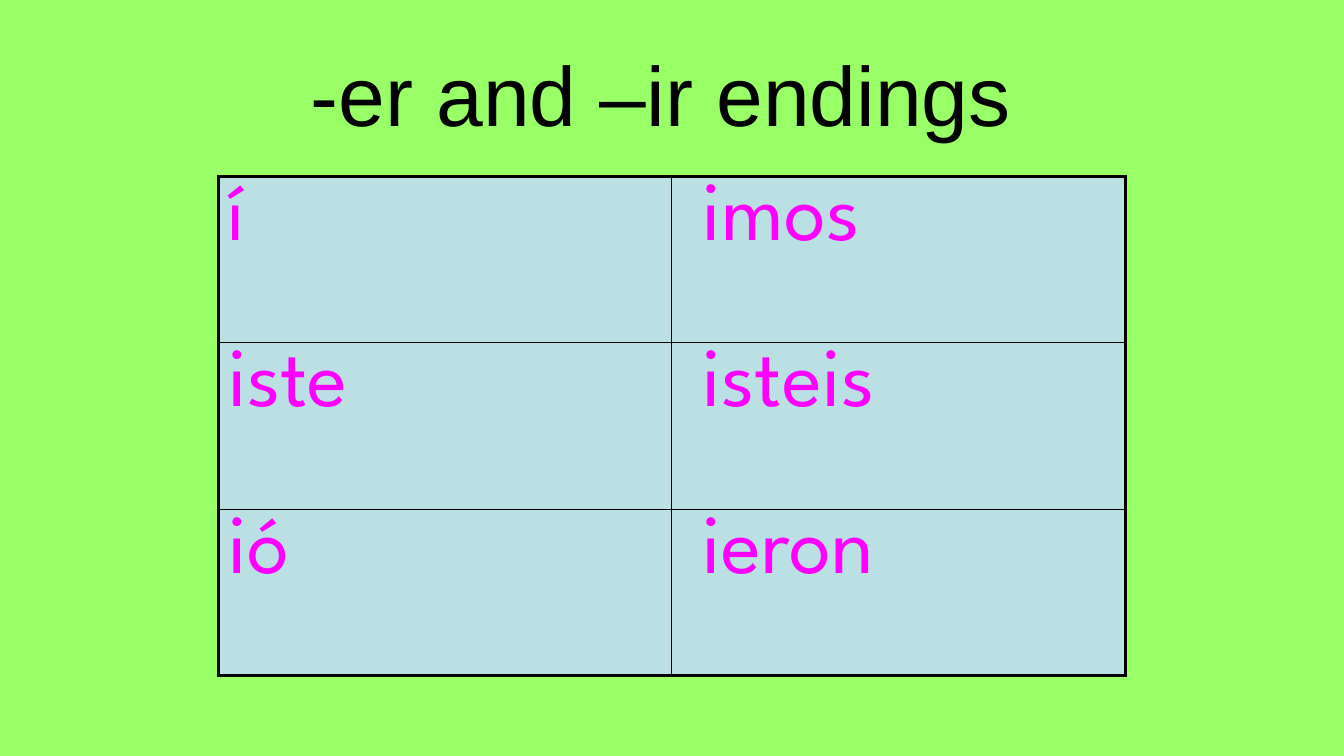
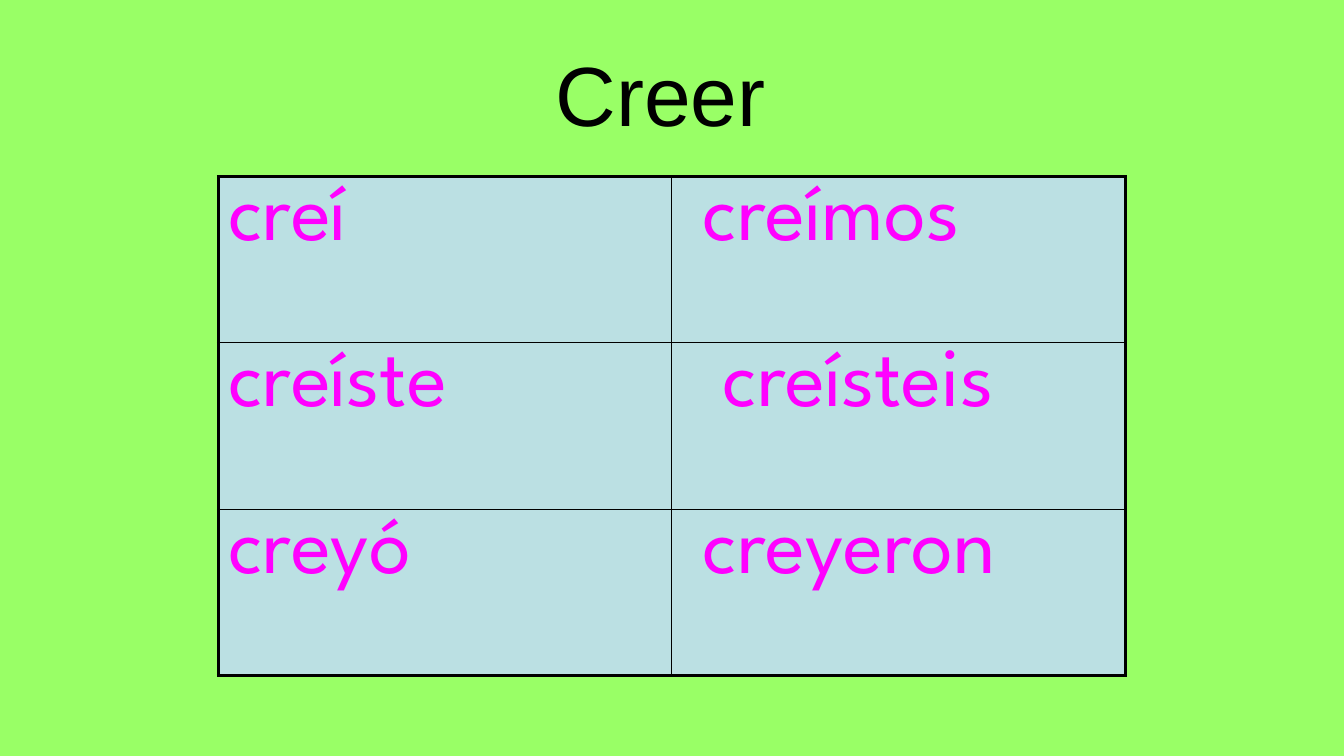
from lxml import etree
from pptx import Presentation
from pptx import util as u
from pptx.dml.color import RGBColor
from pptx.enum import text
from pptx.oxml import ns

SLIDES = [
    ("-er and –ir endings", [("í", "imos"), ("iste", "isteis"), ("ió", "ieron")], {}),
    ("Creer", [("creí", "creímos"), ("creíste", "creísteis"), ("creyó", "creyeron")],
     {"creísteis": 1.28}),
]

GREEN, BLUE, MAGENTA, BLACK = "99FF66", "BBE0E3", "FF00FF", "000000"
TITLE_FONT, TABLE_FONT, FONT_SIZE = "Arial", "League Spartan", 60
OUTER_LINE, INNER_LINE = 2.25, 1
COLUMN_WIDTH, ROW_HEIGHT = 11.43, 4.19
COLUMN_INDENTS = (0.25, 0.78)


def color(value):
    return RGBColor.from_string(value)


def format_text(frame, font_name, font_color, alignment):
    paragraph = frame.paragraphs[0]
    paragraph.alignment = alignment
    paragraph.font.name = font_name
    paragraph.font.size = u.Pt(FONT_SIZE)
    paragraph.font.color.rgb = color(font_color)


def add_title(slide, title):
    shape = slide.shapes.title
    shape.left, shape.top = u.Cm(1.7), u.Cm(0.76)
    shape.width, shape.height = u.Cm(30.48), u.Cm(3.18)
    frame = shape.text_frame
    frame.text = title
    frame.margin_right = u.Cm(0.84)
    frame.vertical_anchor = text.MSO_ANCHOR.MIDDLE
    format_text(frame, TITLE_FONT, BLACK, text.PP_ALIGN.CENTER)


def set_borders(cell, widths):
    properties = cell._tc.get_or_add_tcPr()
    for index, (side, width) in enumerate(widths.items()):
        line = etree.Element(ns.qn("a:ln" + side), w=str(u.Pt(width)))
        fill = etree.SubElement(line, ns.qn("a:solidFill"))
        etree.SubElement(fill, ns.qn("a:srgbClr"), val=BLACK)
        properties.insert(index, line)


def add_endings_table(slide, rows, indents):
    row_count, column_count = len(rows), len(rows[0])
    table = slide.shapes.add_table(
        row_count, column_count, u.Cm(5.5), u.Cm(4.45),
        u.Cm(COLUMN_WIDTH * column_count), u.Cm(ROW_HEIGHT * row_count)).table
    table.first_row = table.horz_banding = False
    for row_index, words in enumerate(rows):
        for column_index, word in enumerate(words):
            cell = table.cell(row_index, column_index)
            cell.text = word
            cell.margin_left = u.Cm(indents.get(word, COLUMN_INDENTS[column_index]))
            format_text(cell.text_frame, TABLE_FONT, MAGENTA, text.PP_ALIGN.LEFT)
            cell.fill.solid()
            cell.fill.fore_color.rgb = color(BLUE)
            on_edge = {
                "L": column_index == 0,
                "R": column_index == column_count - 1,
                "T": row_index == 0,
                "B": row_index == row_count - 1,
            }
            set_borders(cell, {side: OUTER_LINE if edge else INNER_LINE
                               for side, edge in on_edge.items()})


def main():
    presentation = Presentation()
    presentation.slide_width, presentation.slide_height = u.Cm(33.87), u.Cm(19.05)
    background = presentation.slide_master.background.fill
    background.solid()
    background.fore_color.rgb = color(GREEN)
    layout = presentation.slide_layouts.get_by_name("Title Only")
    for title, rows, indents in SLIDES:
        slide = presentation.slides.add_slide(layout)
        add_title(slide, title)
        add_endings_table(slide, rows, indents)
    presentation.save("out.pptx")


if __name__ == "__main__":
    main()
